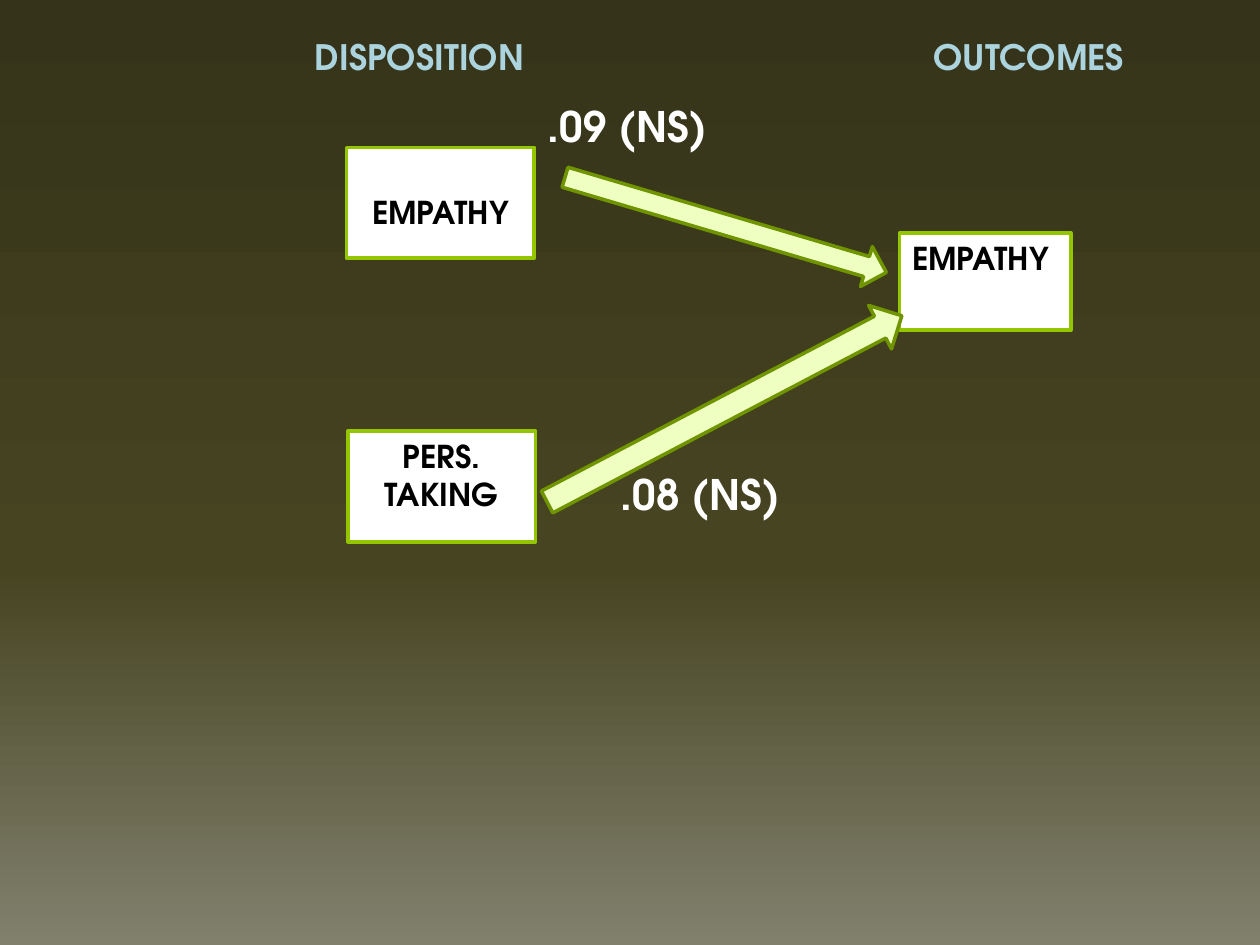
from copy import deepcopy

from pptx import Presentation
from pptx.dml.color import RGBColor
from pptx.enum.shapes import MSO_SHAPE as Shape
from pptx.enum.text import MSO_ANCHOR as Anchor, PP_ALIGN as Align
from pptx.oxml.ns import qn
from pptx.util import Inches, Pt

FONT = "TeX Gyre Adventor"
BLACK, WHITE, PALE_BLUE = "000000", "FFFFFF", "ACD4DE"
GREEN, DARK_GREEN, PALE_GREEN = "94C600", "6F9400", "EFFFC1"
BACKGROUND = [(0, "353319"), (0.6, "464421"), (1, "81806D")]


def color(hex_code):
    return RGBColor.from_string(hex_code)


def paint_background(page):
    fill = page.background.fill
    fill.gradient()
    fill.gradient_angle = 270
    stop_list = page.element.find(".//" + qn("a:gsLst"))
    stop_list.append(deepcopy(stop_list[-1]))
    for stop, (position, hex_code) in zip(fill.gradient_stops, BACKGROUND):
        stop.position = position
        stop.color.rgb = color(hex_code)


def write(box, text, size, hex_code, align=Align.LEFT):
    frame = box.text_frame
    frame.text = text
    frame.word_wrap = True
    frame.vertical_anchor = Anchor.TOP
    para = frame.paragraphs[0]
    para.alignment = align
    for span in para.runs:
        span.font.name = FONT
        span.font.size = Pt(size)
        span.font.bold = True
        span.font.color.rgb = color(hex_code)


def add_label(page, text, left, top, width, height, size, hex_code):
    box = page.shapes.add_textbox(*map(Inches, (left, top, width, height)))
    write(box, text, size, hex_code)


def add_outlined(page, kind, bounds, fill, line):
    shape = page.shapes.add_shape(kind, *map(Inches, bounds))
    shape.shadow.inherit = False
    shape.fill.solid()
    shape.fill.fore_color.rgb = color(fill)
    shape.line.color.rgb = color(line)
    shape.line.width = Pt(2)
    return shape


def add_variable(page, text, *bounds, align=Align.CENTER, inset=0.05):
    box = add_outlined(page, Shape.RECTANGLE, bounds, WHITE, GREEN)
    write(box, text, 18, BLACK, align)
    box.text_frame.margin_top = Inches(inset)


def add_path_arrow(page, *bounds, angle):
    arrow = add_outlined(page, Shape.RIGHT_ARROW, bounds, PALE_GREEN, DARK_GREEN)
    arrow.rotation = angle


def build_path_model(page):
    add_variable(page, "PERS. TAKING", 2.76, 3.42, 1.49, 0.88)
    add_variable(page, "EMPATHY", 7.14, 1.85, 1.36, 0.77, align=Align.LEFT)
    add_variable(page, "EMPATHY", 2.75, 1.17, 1.49, 0.88, inset=0.36)

    add_label(page, "DISPOSITION", 2.4, 0.23, 2.2, 0.44, 20, PALE_BLUE)
    add_label(page, "OUTCOMES", 7.31, 0.23, 2.2, 0.44, 20, PALE_BLUE)

    add_path_arrow(page, 4.43, 1.62, 2.66, 0.33, angle=16.5)
    add_label(page, ".09 (NS)", 4.25, 0.75, 1.67, 0.5, 24, WHITE)
    add_path_arrow(page, 4.16, 3.05, 3.18, 0.39, angle=332.3)
    add_label(page, ".08 (NS)", 4.83, 3.67, 1.67, 0.5, 24, WHITE)


def main():
    deck = Presentation()
    deck.slide_width, deck.slide_height = Inches(10), Inches(7.5)
    page = deck.slides.add_slide(deck.slide_layouts[6])
    paint_background(page)
    build_path_model(page)
    deck.save("out.pptx")


if __name__ == "__main__":
    main()
